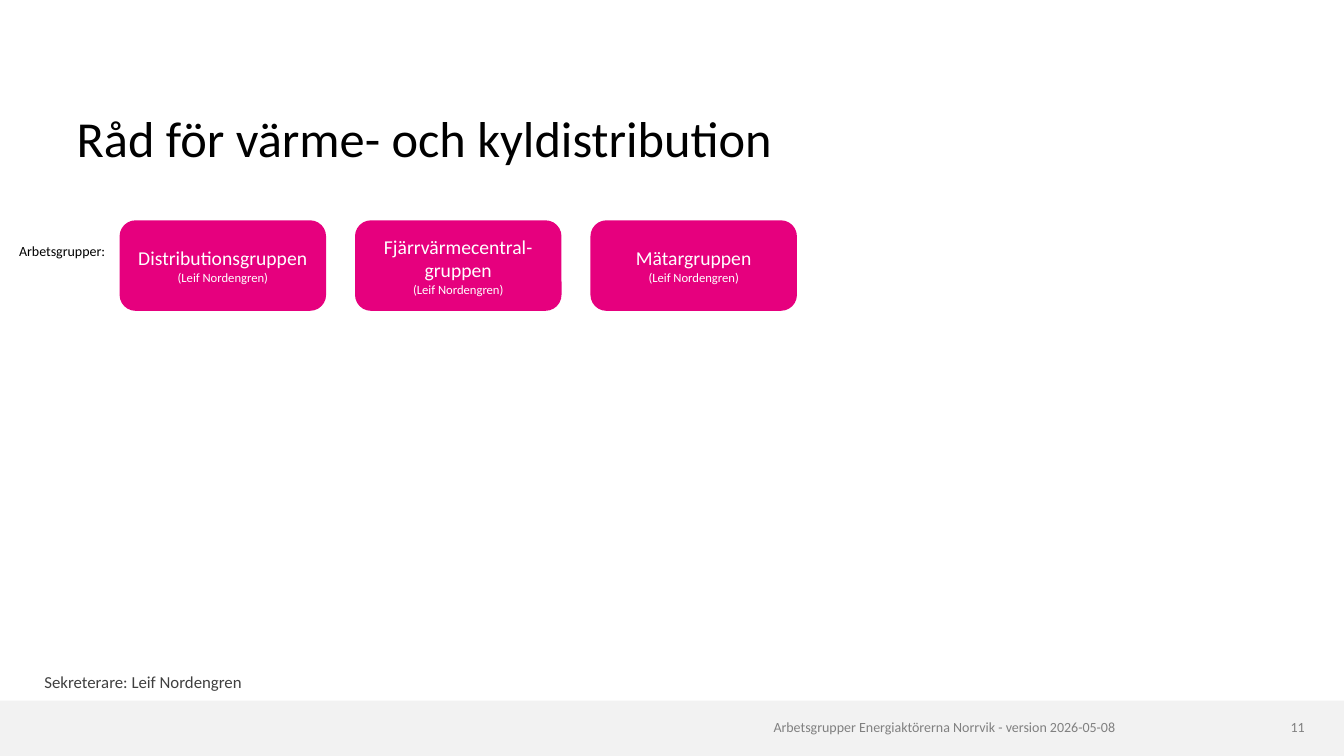
"""Build the slide on the council for heat and cooling distribution."""
from lxml.etree import SubElement
from pptx import Presentation
from pptx.dml.color import RGBColor
from pptx.enum.shapes import MSO_SHAPE as Shape
from pptx.enum.text import MSO_ANCHOR as Anchor, MSO_AUTO_SIZE as AutoSize, PP_ALIGN as Align
from pptx.oxml.ns import qn
from pptx.util import Inches, Pt

BLACK = RGBColor(0x00, 0x00, 0x00)
DARK = RGBColor(0x40, 0x40, 0x40)
GREY = RGBColor(0x80, 0x80, 0x80)
PALE = RGBColor(0xF2, 0xF2, 0xF2)
WHITE = RGBColor(0xFF, 0xFF, 0xFF)
PINK = RGBColor(0xE6, 0x00, 0x7E)

GROUP_LEFT, GROUP_TOP = 1.2, 2.2
GROUP_WIDTH, GROUP_HEIGHT = 2.02, 0.87
GROUP_STEP = 2.335
BAR_TOP, BAR_HEIGHT = 6.95, 0.55
FOOTER_TOP = 7.13


def place(box, left, top, width, height):
    """Move a shape to a position given in inches."""
    box.left, box.top = Inches(left), Inches(top)
    box.width, box.height = Inches(width), Inches(height)


def write(box, lines, color, align=Align.LEFT, anchor=Anchor.TOP, spacing=1.0, inset=0.0):
    """Fill a shape with one paragraph for each pair of text and size."""
    frame = box.text_frame
    frame.word_wrap = True
    frame.auto_size = AutoSize.NONE
    frame.vertical_anchor = anchor
    frame.margin_left = frame.margin_right = Inches(inset)
    frame.margin_top = frame.margin_bottom = Inches(inset / 2)
    for number, (text, size) in enumerate(lines):
        para = frame.add_paragraph() if number else frame.paragraphs[0]
        para.alignment = align
        para.line_spacing = spacing
        para.space_before = Pt(0)
        span = para.add_run()
        span.text = text
        span.font.name = "Calibri"
        span.font.size = Pt(size)
        span.font.color.rgb = color


deck = Presentation()
deck.slide_width, deck.slide_height = Inches(13.33), Inches(7.5)
page = deck.slides.add_slide(deck.slide_layouts[1])
title, secretary = page.placeholders

bar = page.shapes.add_shape(Shape.RECTANGLE, 0, Inches(BAR_TOP), deck.slide_width, Inches(BAR_HEIGHT))
bar.shadow.inherit = False
bar.fill.solid()
bar.fill.fore_color.rgb = PALE
bar.line.fill.background()

for text, left, width in (
    ("Arbetsgrupper Energiaktörerna Norrvik - version 2026-05-08", 2.2, 8.86),
    ("11", 12.55, 0.39),
):
    footer = page.shapes.add_textbox(0, 0, 0, 0)
    place(footer, left, FOOTER_TOP, width, 0.2)
    write(footer, [(text, 10)], GREY, align=Align.RIGHT)

place(title, 0.76, 0.59, 9.49, 1.07)
write(title, [("Råd för värme- och kyldistribution", 36)], BLACK, anchor=Anchor.BOTTOM, spacing=0.85)

place(secretary, 0.44, 6.66, 4.86, 0.23)
properties = secretary.text_frame.paragraphs[0]._p.get_or_add_pPr()
properties.set("marL", "0")
properties.set("indent", "0")
SubElement(properties, qn("a:buNone"))
write(secretary, [("Sekreterare: Leif Nordengren", 12)], DARK, anchor=Anchor.MIDDLE, spacing=0.97)

for column, name in enumerate(("Distributionsgruppen", "Fjärrvärmecentral-gruppen", "Mätargruppen")):
    group = page.shapes.add_shape(Shape.ROUNDED_RECTANGLE, 0, 0, 0, 0)
    place(group, GROUP_LEFT + column * GROUP_STEP, GROUP_TOP, GROUP_WIDTH, GROUP_HEIGHT)
    group.shadow.inherit = False
    group.fill.solid()
    group.fill.fore_color.rgb = PINK
    group.line.color.rgb = PINK
    group.line.width = Pt(2)
    lines = [(name, 14), ("(Leif Nordengren)", 9)]
    write(group, lines, WHITE, align=Align.CENTER, anchor=Anchor.MIDDLE, inset=0.1)

label = page.shapes.add_textbox(0, 0, 0, 0)
place(label, 0.09, 2.38, 1.21, 0.25)
write(label, [("Arbetsgrupper:", 10)], BLACK, spacing=0.9, inset=0.1)

deck.save("out.pptx")
